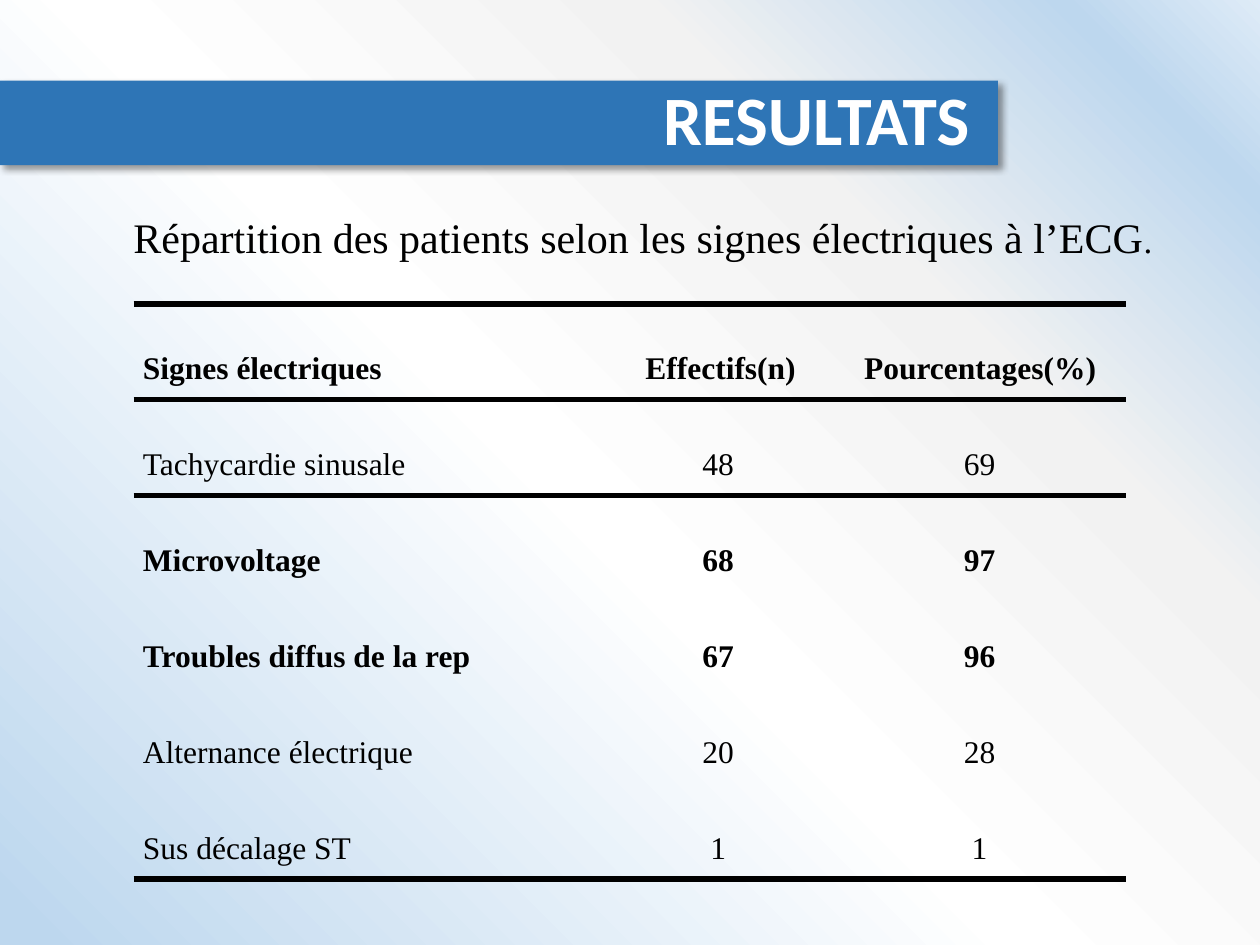
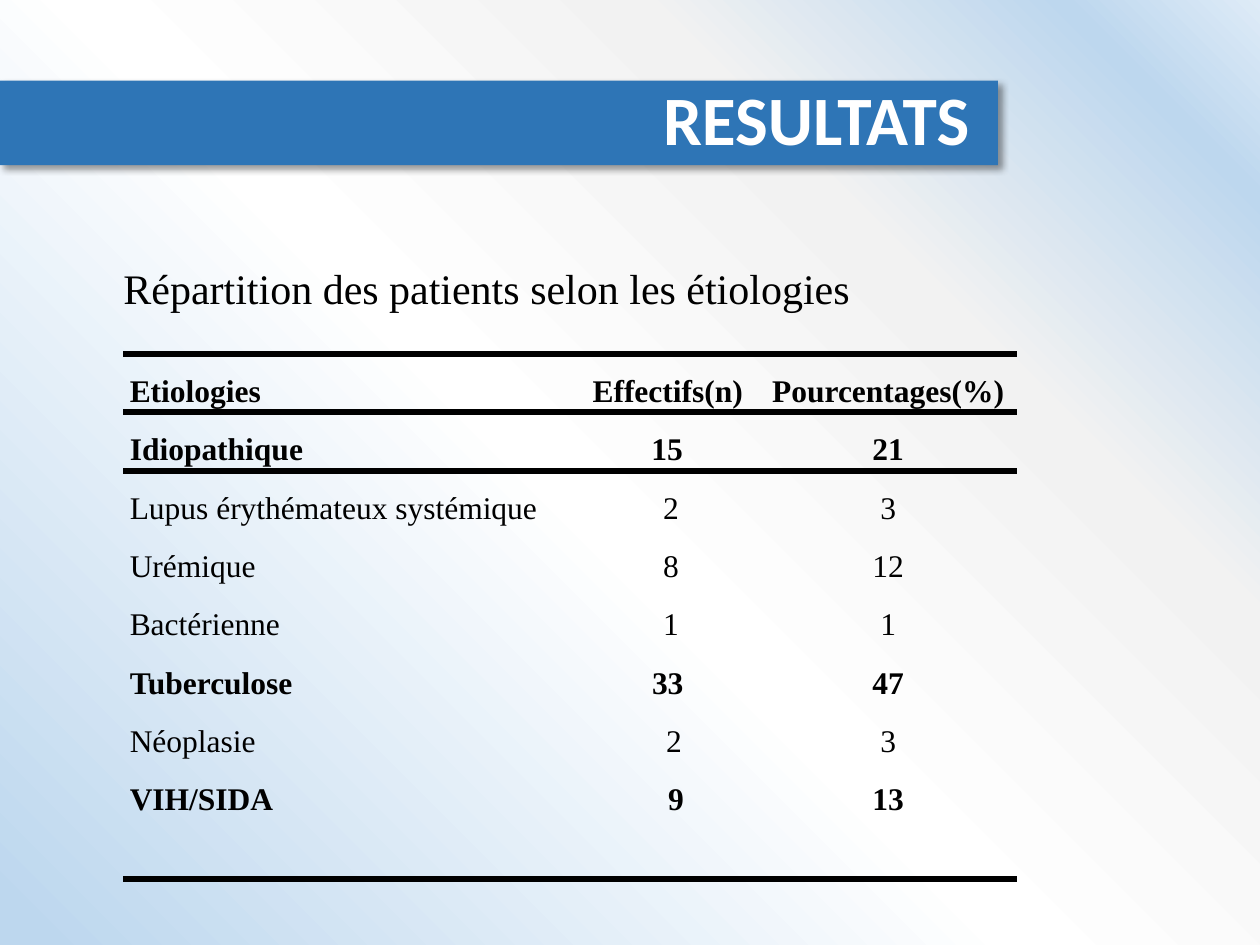
"""Build two result slides, each with a title band, a caption and a ruled table."""
from dataclasses import dataclass

import lxml.etree
import pptx
import pptx.dml.color
import pptx.enum.text
import pptx.oxml
import pptx.oxml.ns
import pptx.util

GRID_COLUMNS, GRID_ROWS = 100, 75
UNIT = pptx.util.Inches(10) // GRID_COLUMNS
CAPTION_ROWS = 7.3
RIGHT_EDGE = 95
NO_GRID_STYLE = "{2D5ABB26-0587-4C30-8999-92F81FD0307C}"
ALIGN = pptx.enum.text.PP_ALIGN
MIDDLE = pptx.enum.text.MSO_ANCHOR.MIDDLE


@dataclass(frozen=True)
class Theme:
    """Colours, fonts and point sizes shared by the slides."""

    band: str = "2E75B6"
    title_text: str = "FFFFFF"
    ink: str = "000000"
    backdrop: tuple = ((0, "DEEBF7"), (9, "BDD7EE"), (28, "F2F2F2"), (54, "FFFFFF"), (98, "BDD7EE"))
    title_font: str = "Calibri"
    body_font: str = "Times New Roman"
    title_size: float = 39.6
    caption_size: float = 24
    stop_size: float = 20
    table_size: float = 18
    rule_width: float = 3.75


@dataclass(frozen=True)
class Box:
    """A region in grid columns and rows."""

    left: float
    top: float
    width: float
    height: float

    def lengths(self):
        """Return left, top, width and height as slide lengths."""
        return [grid(side) for side in (self.left, self.top, self.width, self.height)]


@dataclass(frozen=True)
class TableStyle:
    """Column widths, side padding and paragraph spacing of one table."""

    columns: tuple
    padding: float
    line_spacing: float
    space_after: float


@dataclass(frozen=True)
class Row:
    """One table row; the indents shift its two centred figures."""

    texts: tuple = ("", "", "")
    bold: bool = False
    indents: tuple = (0, 0, 0)


THEME = Theme()
BAND = Box(0, 6.4, 79.2, 6.7)

SIGNS = [
    Row(("Signes électriques", "Effectifs(n)", "Pourcentages(%)"), True, (0, 0.4, 0.1)),
    Row(("Tachycardie sinusale", "48", "69")),
    Row(("Microvoltage", "68", "97"), True),
    Row(("Troubles diffus de la rep", "67", "96"), True),
    Row(("Alternance électrique", "20", "28")),
    Row(("Sus décalage ST", "1", "1")),
]
CAUSES = [
    Row(("Etiologies", "Effectifs(n)", "Pourcentages(%)"), True, (0, 0.1, 0)),
    Row(("Idiopathique", "15", "21"), True),
    Row(("Lupus érythémateux systémique", "2", "3"), False, (0, 0.6, 0)),
    Row(("Urémique", "8", "12"), False, (0, 0.6, 0)),
    Row(("Bactérienne", "1", "1"), False, (0, 0.6, 0)),
    Row(("Tuberculose", "33", "47"), True, (0, 0.1, 0)),
    Row(("Néoplasie", "2", "3"), False, (0, 1.1, 0)),
    Row(("VIH/SIDA", "9", "13"), True, (0, 1.4, 0)),
    Row(),
]


def grid(count):
    """Convert grid units to a slide length."""
    return pptx.util.Emu(round(count * UNIT))


def drawing(markup):
    """Parse one DrawingML element."""
    head, tail = markup.split(">", 1)
    closing = "/" if head.endswith("/") else ""
    head = head.rstrip("/")
    return pptx.oxml.parse_xml(f"{head} {pptx.oxml.ns.nsdecls('a')}{closing}>{tail}")


def add_run(paragraph, text, font_name, size, colour, bold=False):
    """Append one formatted run."""
    run = paragraph.add_run()
    run.text = text
    run.font.name = font_name
    run.font.size = pptx.util.Pt(size)
    run.font.bold = bold
    run.font.color.rgb = pptx.dml.color.RGBColor.from_string(colour)


def set_margins(holder, left=0, right=0):
    """Set side margins in grid units and clear the top and bottom ones."""
    holder.margin_left, holder.margin_right = grid(left), grid(right)
    holder.margin_top = holder.margin_bottom = 0


def paint_backdrop(master):
    """Spread the gradient from the top right corner on the master."""
    master.background.fill.gradient()
    gradient = master.element.cSld.find(".//" + pptx.oxml.ns.qn("a:gradFill"))
    stops = "".join(
        f'<a:gs pos="{share * 1000}"><a:srgbClr val="{colour}"/></a:gs>'
        for share, colour in THEME.backdrop
    )
    corner = drawing(
        f'<a:gradFill rotWithShape="1"><a:gsLst>{stops}</a:gsLst>'
        '<a:path path="circle"><a:fillToRect l="100000" b="100000"/></a:path>'
        '<a:tileRect t="-100000" r="-100000"/></a:gradFill>'
    )
    gradient.getparent().replace(gradient, corner)


def place_title(slide, box, text):
    """Turn the title placeholder into the shadowed band."""
    title = slide.shapes.title
    title.left, title.top, title.width, title.height = box.lengths()
    title.fill.solid()
    title.fill.fore_color.rgb = pptx.dml.color.RGBColor.from_string(THEME.band)
    title._element.spPr.append(drawing(
        '<a:effectLst><a:outerShdw blurRad="50800" dist="38100" dir="2700000" algn="tl">'
        f'<a:srgbClr val="{THEME.ink}"><a:alpha val="40000"/></a:srgbClr>'
        '</a:outerShdw></a:effectLst>'
    ))
    frame = title.text_frame
    frame.auto_size = pptx.enum.text.MSO_AUTO_SIZE.NONE
    frame.vertical_anchor = MIDDLE
    set_margins(frame, right=2.25)
    heading = frame.paragraphs[0]
    heading.alignment = ALIGN.RIGHT
    heading.line_spacing = 0.9
    add_run(heading, text, THEME.title_font, THEME.title_size, THEME.title_text, True)


def place_caption(slide, box, runs):
    """Write the caption at the top of its box from (text, size) runs."""
    frame = slide.shapes.add_textbox(*box.lengths()).text_frame
    frame.word_wrap = True
    set_margins(frame)
    for text, size in runs:
        add_run(frame.paragraphs[0], text, THEME.body_font, size, THEME.ink)


def rule_cell(cell, sides):
    """Draw thick rules on the named sides of a cell, in schema order."""
    properties = cell._tc.get_or_add_tcPr()
    for position, side in enumerate(sides):
        properties.insert(position, drawing(
            f'<a:ln{side} w="{pptx.util.Pt(THEME.rule_width)}"><a:solidFill>'
            f'<a:srgbClr val="{THEME.ink}"/></a:solidFill></a:ln{side}>'
        ))


def fill_cell(cell, text, bold, indent, alignment, style):
    """Format one table cell and write its text."""
    cell.fill.background()
    cell.vertical_anchor = MIDDLE
    set_margins(cell, style.padding, style.padding)
    line = cell.text_frame.paragraphs[0]
    line.alignment = alignment
    line.line_spacing = style.line_spacing
    line.space_after = pptx.util.Pt(style.space_after)
    if indent:
        line._p.get_or_add_pPr().set("marL", str(grid(indent)))
    if text:
        add_run(line, text, THEME.body_font, THEME.table_size, THEME.ink, bold)


def place_table(slide, box, rows, style):
    """Fill the box with equal rows, ruled around the header and at the foot."""
    frame = slide.shapes.add_table(len(rows), len(style.columns), *box.lengths())
    table = frame.table
    table.first_row = table.horz_banding = False
    table._tbl.tblPr.find(pptx.oxml.ns.qn("a:tableStyleId")).text = NO_GRID_STYLE
    for column, width in zip(table.columns, style.columns):
        column.width = grid(width)
    rules = {0: "TB", 1: "T", len(rows) - 1: "B"}
    for number, row in enumerate(rows):
        table.rows[number].height = grid(box.height / len(rows))
        for place, (text, indent) in enumerate(zip(row.texts, row.indents)):
            cell = table.cell(number, place)
            alignment = ALIGN.CENTER if place else ALIGN.LEFT
            fill_cell(cell, text, row.bold, indent, alignment, style)
            rule_cell(cell, rules.get(number, ""))


def add_result_slide(deck, box, caption, rows, style):
    """Add a slide with the title band and a captioned table in the box."""
    slide = deck.slides.add_slide(deck.slide_layouts.get_by_name("Title Only"))
    place_title(slide, BAND, "RESULTATS")
    place_caption(slide, Box(box.left, box.top, RIGHT_EDGE - box.left, CAPTION_ROWS), caption)
    table_box = Box(box.left, box.top + CAPTION_ROWS, box.width, box.height - CAPTION_ROWS)
    place_table(slide, table_box, rows, style)


def main():
    """Build and save the deck."""
    deck = pptx.Presentation()
    deck.slide_width, deck.slide_height = grid(GRID_COLUMNS), grid(GRID_ROWS)
    paint_backdrop(deck.slide_master)
    add_result_slide(
        deck, Box(10.6, 16.8, 78.8, 53),
        [("Répartition des patients selon les signes électriques à l’ECG", THEME.caption_size),
         (".", THEME.stop_size)],
        SIGNS, TableStyle((37.3, 18.2, 23.3), 0.75, 2, 8),
    )
    add_result_slide(
        deck, Box(9.8, 20.8, 70.9, 49),
        [("Répartition des patients selon les étiologies", THEME.caption_size)],
        CAUSES, TableStyle((35.8, 14.7, 20.4), 0.5, 1.5, 0),
    )
    deck.save("out.pptx")


if __name__ == "__main__":
    main()
